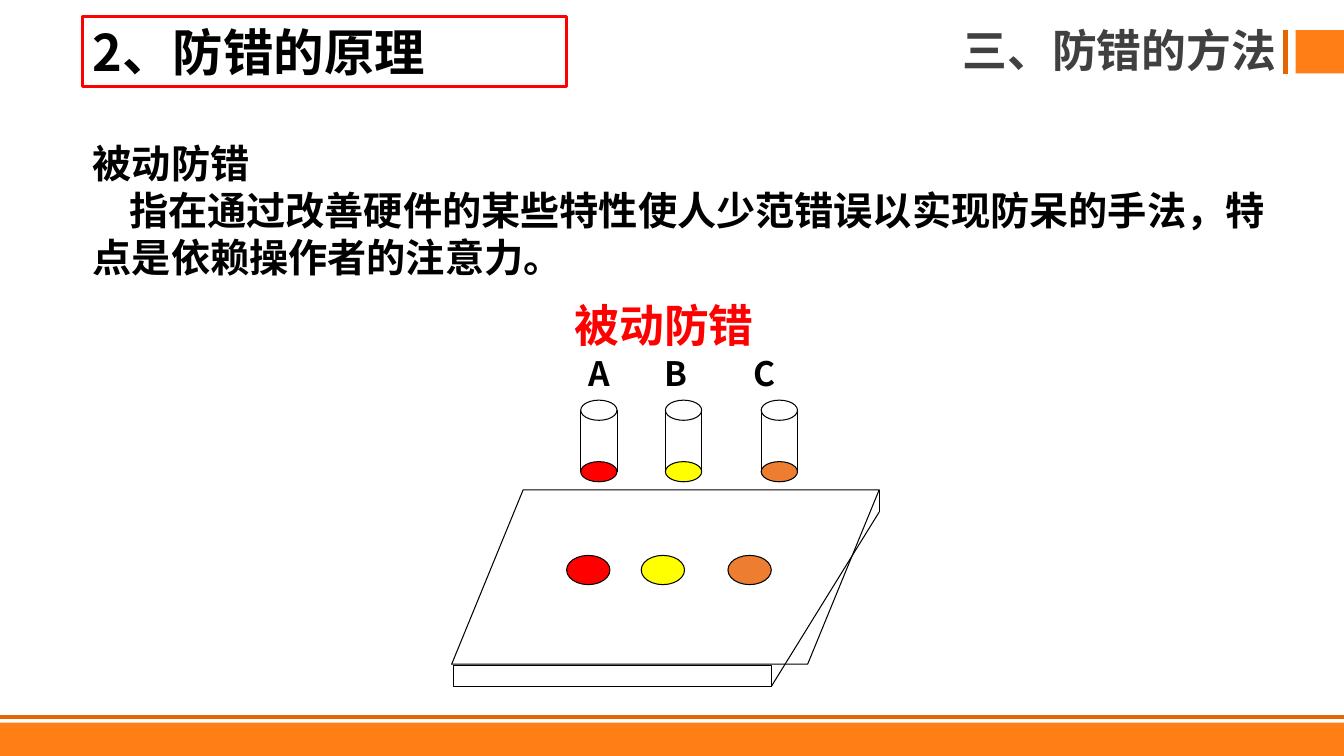
import pptx
import pptx.util
import pptx.dml.color
import pptx.enum.shapes
import pptx.enum.text
import pptx.oxml.ns
import lxml.etree

PX = 9144
FONT = "Noto Sans CJK SC"
HUES = {"black": "000000", "grey": "404040", "red": "FF0000", "yellow": "FFFF00",
        "brown": "ED7D31", "orange": "FF7E16", "rust": "E56500"}
KIND = pptx.enum.shapes.MSO_SHAPE
ALIGN = pptx.enum.text.PP_ALIGN
ANCHOR = pptx.enum.text.MSO_ANCHOR


def tint(name):
    """Return the named colour."""
    return pptx.dml.color.RGBColor.from_string(HUES[name])


def edge(line, hue, width):
    """Colour a line and set its width in points."""
    line.color.rgb = tint(hue)
    line.width = pptx.util.Pt(width)


def place(item, box):
    """Move an item to a box given in px."""
    item.left, item.top, item.width, item.height = [n * PX for n in box]


def shape(slide, kind, box, fill=None, line="black"):
    """Add a preset shape with an optional fill and outline."""
    item = slide.shapes.add_shape(kind, *[n * PX for n in box])
    item.shadow.inherit = False
    if fill:
        item.fill.solid()
        item.fill.fore_color.rgb = tint(fill)
    else:
        item.fill.background()
    if line:
        edge(item.line, line, 0.75)
    else:
        item.line.fill.background()
    return item


def stroke(slide, start, end, hue="black", width=0.75):
    """Add a straight line between two points."""
    kind = pptx.enum.shapes.MSO_CONNECTOR.STRAIGHT
    item = slide.shapes.add_connector(kind, *[n * PX for n in (*start, *end)])
    edge(item.line, hue, width)
    lxml.etree.SubElement(item._element.spPr, pptx.oxml.ns.qn("a:effectLst"))


def write(item, text, size, hue="black", align=ALIGN.LEFT, anchor=ANCHOR.MIDDLE):
    """Fill an item with bold text free of bullets."""
    frame = item.text_frame
    frame.text = text
    frame.word_wrap = True
    frame.auto_size = pptx.enum.text.MSO_AUTO_SIZE.NONE
    frame.vertical_anchor = anchor
    for para in frame.paragraphs:
        para.alignment = align
        para.space_before = pptx.util.Pt(0)
        para.line_spacing = pptx.util.Pt(size * 1.2)
        props = para._p.get_or_add_pPr()
        props.set("marL", "0")
        props.set("indent", "0")
        lxml.etree.SubElement(props, pptx.oxml.ns.qn("a:buNone"))
        for run in para.runs:
            font = run.font
            font.name, font.size, font.bold = FONT, pptx.util.Pt(size), True
            font.color.rgb = tint(hue)
            east = lxml.etree.SubElement(font._element, pptx.oxml.ns.qn("a:ea"))
            east.set("typeface", FONT)


def label(slide, box, text, size, hue="black"):
    """Add a text box."""
    item = slide.shapes.add_textbox(*[n * PX for n in box])
    write(item, text, size, hue)


def header(slide, item, box):
    """Place the section name and the marks at its right."""
    x, y, w, h = box
    place(item, (x, y, w - 57, h))
    write(item, "三、防错的方法", 32, "grey", ALIGN.RIGHT)
    stroke(slide, (x + w - 58, y + 4), (x + w - 58, y + h), "rust", 3)
    shape(slide, KIND.RECTANGLE, (x + w - 48, y + 4, 48, 43), "orange", None)


def footer(slide, box):
    """Draw the bar and the rule over it."""
    x, y, w, h = box
    stroke(slide, (x, y), (x + w, y), "rust", 3)
    shape(slide, KIND.RECTANGLE, (x, y + 6, w, h - 6), "orange", None)


def title(item, box):
    """Place the framed title."""
    place(item, box)
    write(item, "2、防错的原理", 36)
    edge(item.line, "red", 2)


def body(item, box):
    """Place the term and its meaning."""
    place(item, box)
    write(item, "被动防错\n指在通过改善硬件的某些特性使人少范错误以实现防呆的手法，特点是依赖操作者的注意力。",
          28, anchor=ANCHOR.TOP)
    item.text_frame.paragraphs[1]._p.pPr.set("indent", str(36 * PX))


def board(slide, box):
    """Draw the slanted board with its front and side."""
    x, y, w, h = box
    top = shape(slide, KIND.PARALLELOGRAM, (x, y, w, h - 22))
    top.adjustments[0] = 0.41
    shape(slide, KIND.RECTANGLE, (x + 2, y + h - 21, 315, 21))
    stroke(slide, (x + w, y), (x + w, y + 22))
    stroke(slide, (x + 317, y + h), (x + w, y + 22))


def tube(slide, box, hue):
    """Draw an upright tube with a coloured base."""
    x, y, w, h = box
    shape(slide, KIND.OVAL, (x, y, w, 20))
    shape(slide, KIND.OVAL, (x, y + h - 20, w, 20), hue)
    for side in (x, x + w):
        stroke(slide, (side, y + 10), (side, y + h - 10))


def figure(slide, box):
    """Draw three tubes over the matching holes of a board."""
    x, y, w, h = box
    label(slide, (x + 112, y, 243, 63), "被动防错", 32, "red")
    board(slide, (x, y + 195, w, h - 195))
    sets = (("A", "red", 126, 128, 114), ("B", "yellow", 201, 212, 188),
            ("C", "brown", 289, 307, 274))
    for name, hue, text, pipe, hole in sets:
        label(slide, (x + text, y + 54, 58, 50), name, 24)
        tube(slide, (x + pipe, y + 106, 36, 81), hue)
        shape(slide, KIND.OVAL, (x + hole, y + 260, 43, 29), hue)


def main():
    """Build and save the slide."""
    deck = pptx.Presentation()
    deck.slide_width, deck.slide_height = 1333 * PX, 750 * PX
    slide = deck.slides.add_slide(deck.slide_layouts[3])
    head, text, part = list(slide.placeholders)[:3]
    footer(slide, (0, 711, 1333, 39))
    header(slide, part, (585, 26, 748, 47))
    title(head, (82, 16, 480, 70))
    body(text, (82, 133, 1194, 150))
    figure(slide, (448, 291, 424, 390))
    deck.save("out.pptx")


if __name__ == "__main__":
    main()
